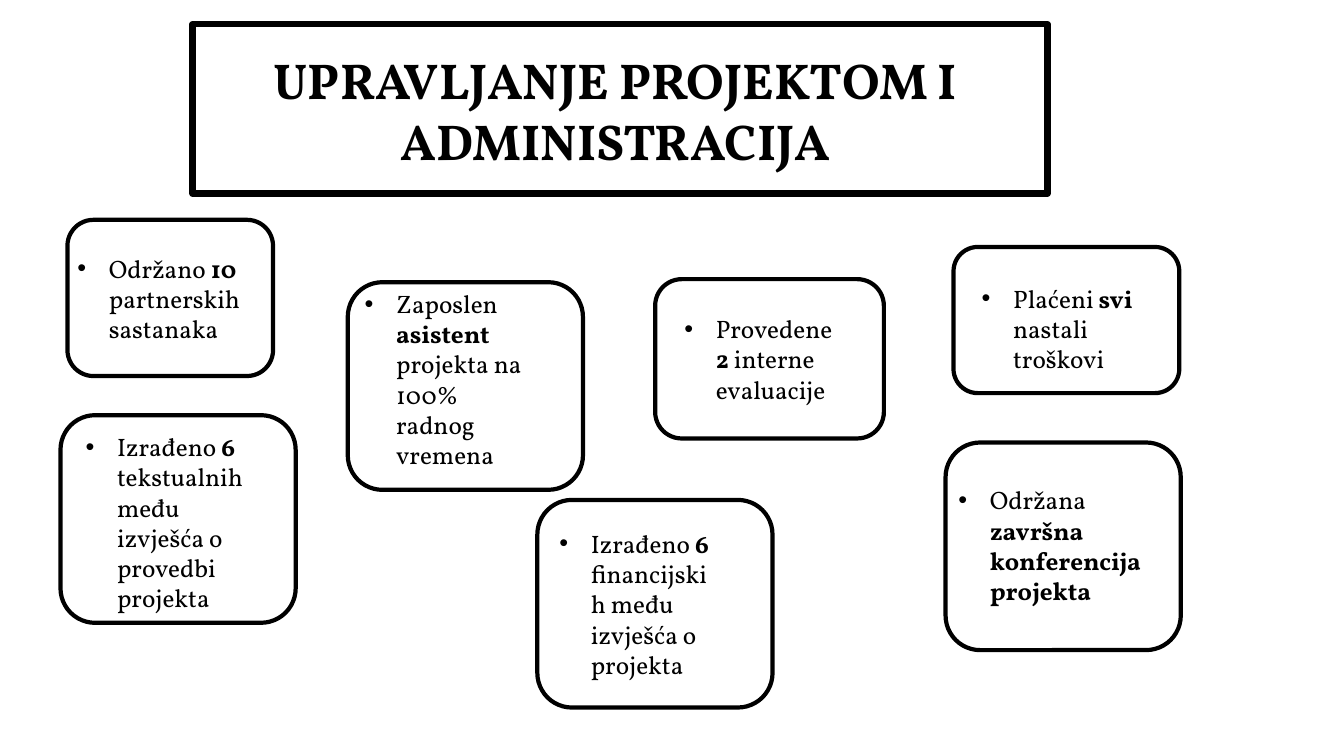
from lxml.etree import SubElement as Sub
from pptx import Presentation
from pptx.dml.color import RGBColor as Rgb
from pptx.enum.shapes import MSO_SHAPE as Kind
from pptx.enum.text import MSO_ANCHOR as Anchor, MSO_AUTO_SIZE as Auto, PP_ALIGN as Align
from pptx.oxml.ns import qn
from pptx.util import Pt

HEX = {"ink": "000000"}
TITLE = "UPRAVLJANJE PROJEKTOM I ADMINISTRACIJA"
HEAD = (185, 31.7, 509, 94.3)
FRAME = (137.5, 17.3, 610.6, 121)
CARDS = [
    {"box": (48.2, 157, 146.9, 111.6), "text": (48.2, 177.1, 130.3), "lines": 3,
     "runs": [("Održano ", False), ("10 ", True), ("partnerskih sastanaka", False)]},
    {"box": (43.2, 296.6, 168, 148.3), "text": (54, 304.6, 130.3), "lines": 6,
     "runs": [("Izrađeno ", False), ("6 ", True),
              ("tekstualnih među izvješća o provedbi projekta", False)]},
    {"box": (248.4, 201.6, 168, 148.3), "text": (253.4, 202.3, 130.3), "lines": 6,
     "runs": [("Zaposlen ", False), ("asistent", True),
              (" projekta na 100% radnog vremena", False)]},
    {"box": (468, 199.4, 163.4, 113.8), "text": (481.7, 220.3, 130.3), "lines": 3,
     "runs": [("Provedene ", False), ("2", True), (" interne evaluacije", False)]},
    {"box": (383.8, 357.1, 168, 148.3), "text": (392.4, 373.7, 130.3), "lines": 5,
     "runs": [("Izrađeno ", False), ("6 ", True),
              ("financijskih među izvješća o projekta", False)]},
    {"box": (681.1, 176.4, 161.3, 104.4), "text": (694.1, 198.7, 130.3), "lines": 3,
     "runs": [("Plaćeni ", False), ("svi", True), (" nastali troškovi", False)]},
    {"box": (675.4, 316.1, 168, 148.3), "text": (677.5, 342.7, 148.3), "lines": 4,
     "runs": [("Održana ", False), ("završna konferencija projekta", True)]},
]
BODY = {"name": "Vollkorn", "size": Pt(18)}
BIG = {"name": "Vollkorn", "size": Pt(36), "bold": True}
FIT = {"word_wrap": True, "auto_size": Auto.NONE, "vertical_anchor": Anchor.TOP,
       "margin_left": Pt(7.2), "margin_right": Pt(7.2),
       "margin_top": Pt(3.6), "margin_bottom": Pt(3.6)}
LEAD, PAD, DENT = 21.6, 7.2, 22.5


def apply(item, look):
    for key, val in look.items():
        setattr(item, key, val)


def ink(font, look):
    apply(font, look)
    font.color.rgb = Rgb.from_string(HEX["ink"])


def outline(kind, box, width):
    shape = slide.shapes.add_shape(kind, *map(Pt, box))
    shape.shadow.inherit = False
    shape.fill.background()
    shape.line.color.rgb = Rgb.from_string(HEX["ink"])
    shape.line.width = Pt(width)


def bullet(para):
    props = para._p.get_or_add_pPr()
    props.set("marL", str(Pt(DENT)))
    props.set("indent", str(-Pt(DENT)))
    Sub(props, qn("a:buFont"), typeface="Arial")
    Sub(props, qn("a:buChar"), char="•")


def label(card):
    high = card["lines"] * LEAD + PAD
    frame = slide.shapes.add_textbox(*map(Pt, (*card["text"], high))).text_frame
    apply(frame, FIT)
    para = frame.paragraphs[0]
    bullet(para)
    for words, bold in card["runs"]:
        run = para.add_run()
        run.text = words
        ink(run.font, {**BODY, "bold": bold})


deck = Presentation()
apply(deck, {"slide_width": Pt(960), "slide_height": Pt(540)})
slide = deck.slides.add_slide(deck.slide_layouts[5])

title = slide.shapes.title
apply(title, dict(zip(("left", "top", "width", "height"), map(Pt, HEAD))))
title.text_frame.text = TITLE
apply(title.text_frame, FIT)
head = title.text_frame.paragraphs[0]
head.alignment = Align.CENTER
ink(head.runs[0].font, BIG)
outline(Kind.FLOWCHART_PROCESS, FRAME, 4.5)

for card in CARDS:
    outline(Kind.ROUNDED_RECTANGLE, card["box"], 3)
    label(card)

deck.save("out.pptx")
